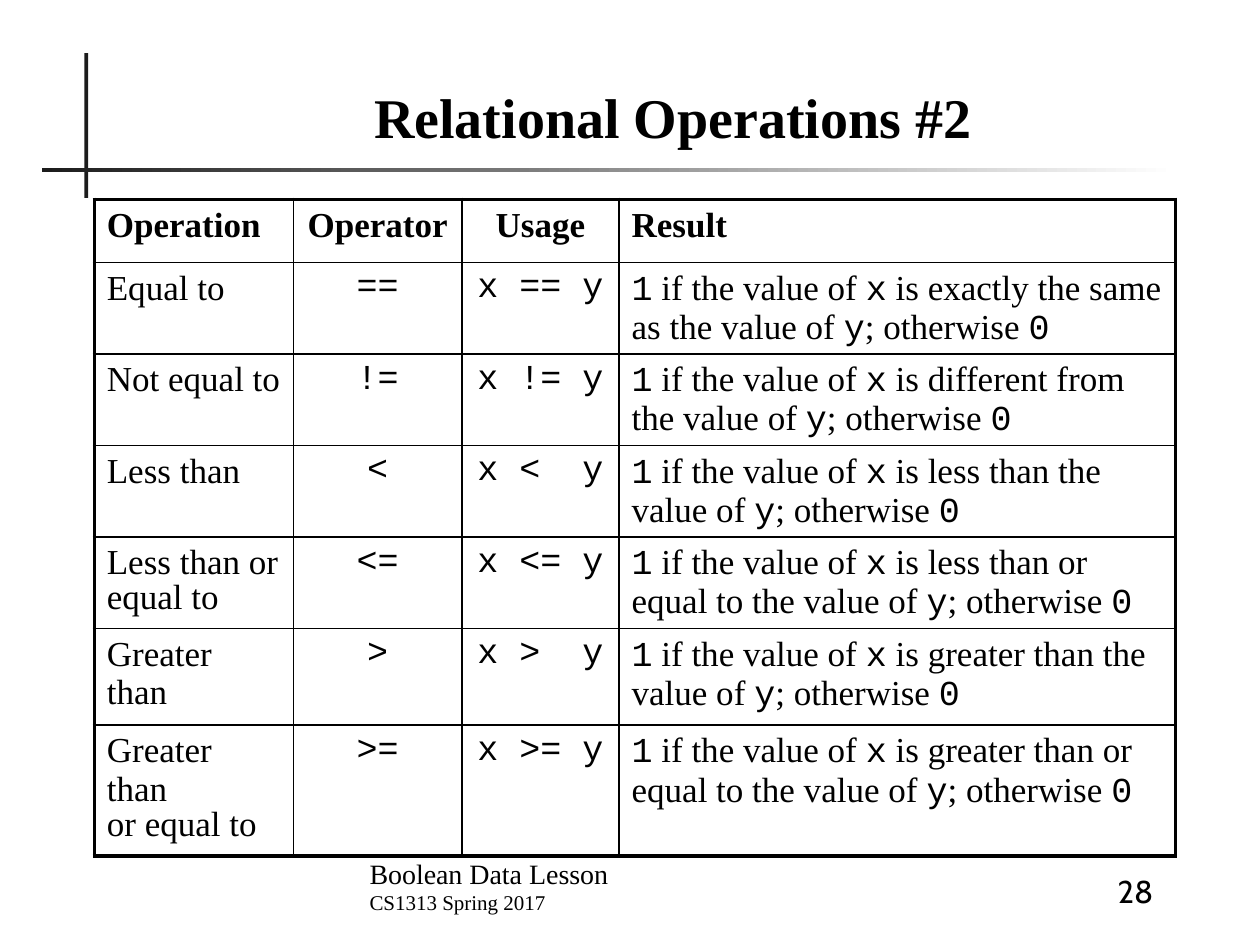
import pptx
import pptx.dml.color
import pptx.enum.shapes
import pptx.enum.text
import pptx.oxml
import pptx.oxml.ns
import pptx.util

Cm = pptx.util.Cm
Pt = pptx.util.Pt
ALIGN = pptx.enum.text.PP_ALIGN
SERIF, MONO = "Times New Roman", "Courier New"
BLACK = "000000"


def color(value):
    return pptx.dml.color.RGBColor.from_string(value)


def write(para, spans, size, align=ALIGN.LEFT, bold=False):
    para.alignment = align
    for text, font in spans:
        span = para.add_run()
        span.text = text
        span.font.name = font
        span.font.size = Pt(size)
        span.font.bold = bold
        span.font.color.rgb = color(BLACK)


deck = pptx.Presentation()
deck.slide_width, deck.slide_height = Cm(25.4), Cm(19.05)
page = deck.slides.add_slide(deck.slide_layouts[5])

# Crossed rules behind the title
rules = []
for left, top, width, height in [(1.7, 1.07, 0.08, 2.92), (0.85, 3.39, 22.86, 0.08)]:
    rule = page.shapes.add_shape(pptx.enum.shapes.MSO_SHAPE.RECTANGLE,
                                 Cm(left), Cm(top), Cm(width), Cm(height))
    rule.shadow.inherit = False
    rule.line.fill.background()
    rules.append(rule)
vertical, horizontal = rules
vertical.fill.solid()
vertical.fill.fore_color.rgb = color("1C1C1C")
horizontal.fill.gradient()
horizontal.fill.gradient_angle = 0
for stop, shade in zip(horizontal.fill.gradient_stops, ["1C1C1C", "FFFFFF"]):
    stop.color.rgb = color(shade)

# Title
title = page.shapes.title
title.left, title.top, title.width, title.height = Cm(2.75), Cm(1.27), Cm(21.64), Cm(1.88)
title.text_frame.vertical_anchor = pptx.enum.text.MSO_ANCHOR.BOTTOM
write(title.text_frame.paragraphs[0], [("Relational Operations #2", SERIF)],
      32, ALIGN.CENTER, True)

# Footer and page number
footers = [
    (7.2, 17.3, 12.28, ALIGN.LEFT,
     [("Boolean Data Lesson", SERIF, 16), ("CS1313 Spring 2017", SERIF, 12)]),
    (19.9, 17.2, 3.6, ALIGN.RIGHT, [("28", "Cabin", 18)]),
]
for left, top, width, align, lines in footers:
    box = page.shapes.add_textbox(Cm(left), Cm(top), Cm(width), Cm(1.27))
    frame = box.text_frame
    frame.word_wrap = True
    frame.vertical_anchor = pptx.enum.text.MSO_ANCHOR.BOTTOM
    for index, (text, font, size) in enumerate(lines):
        para = frame.add_paragraph() if index else frame.paragraphs[0]
        write(para, [(text, font)], size, align)

# Table contents: each cell is a list of lines, each line a list of spans
headings = ["Operation", "Operator", "Usage", "Result"]
operations = [
    (["Equal to"], "==", "exactly the same", "as the value of "),
    (["Not equal to"], "!=", "different from", "the value of "),
    (["Less than"], "<", "less than the", "value of "),
    (["Less than or", "equal to"], "<=", "less than or", "equal to the value of "),
    (["Greater than"], ">", "greater than the", "value of "),
    (["Greater than", "or equal to"], ">=", "greater than or", "equal to the value of "),
]
rows = [[[[(heading, SERIF)]] for heading in headings]]
for names, operator, relation, ending in operations:
    rows.append([
        [[(name, SERIF)] for name in names],
        [[(operator, MONO)]],
        [[(f"x {operator:<2} y", MONO)]],
        [[("1", MONO), (" if the value of ", SERIF), ("x", MONO), (f" is {relation}", SERIF)],
         [(ending, SERIF), ("y", MONO), ("; otherwise ", SERIF), ("0", MONO)]],
    ])

# Table grid
widths = [4.02, 3.39, 3.17, 11.22]
heights = [1.27] + [1.845] * len(operations)
table = page.shapes.add_table(len(rows), len(widths), Cm(1.9), Cm(4.02),
                              Cm(sum(widths)), Cm(sum(heights))).table
table.first_row = table.horz_banding = False
for column, width in zip(table.columns, widths):
    column.width = Cm(width)
for row, height in zip(table.rows, heights):
    row.height = Cm(height)

# Cell text and borders, heavier around the outside
for r, row in enumerate(rows):
    for c, lines in enumerate(row):
        cell = table.cell(r, c)
        for index, spans in enumerate(lines):
            para = cell.text_frame.add_paragraph() if index else cell.text_frame.paragraphs[0]
            if index:
                para.line_spacing = 0.6
                para.space_before = Pt(5)
            write(para, spans, 20, ALIGN.CENTER if c in (1, 2) else ALIGN.LEFT, r == 0)
        outer = {"L": c == 0, "R": c == len(widths) - 1, "T": r == 0, "B": r == len(rows) - 1}
        for side, heavy in outer.items():
            cell._tc.get_or_add_tcPr().append(pptx.oxml.parse_xml(
                f'<a:ln{side} {pptx.oxml.ns.nsdecls("a")} w="{Pt(2.25 if heavy else 1)}">'
                f'<a:solidFill><a:srgbClr val="{BLACK}"/></a:solidFill></a:ln{side}>'))
        cell.fill.background()

deck.save("out.pptx")
